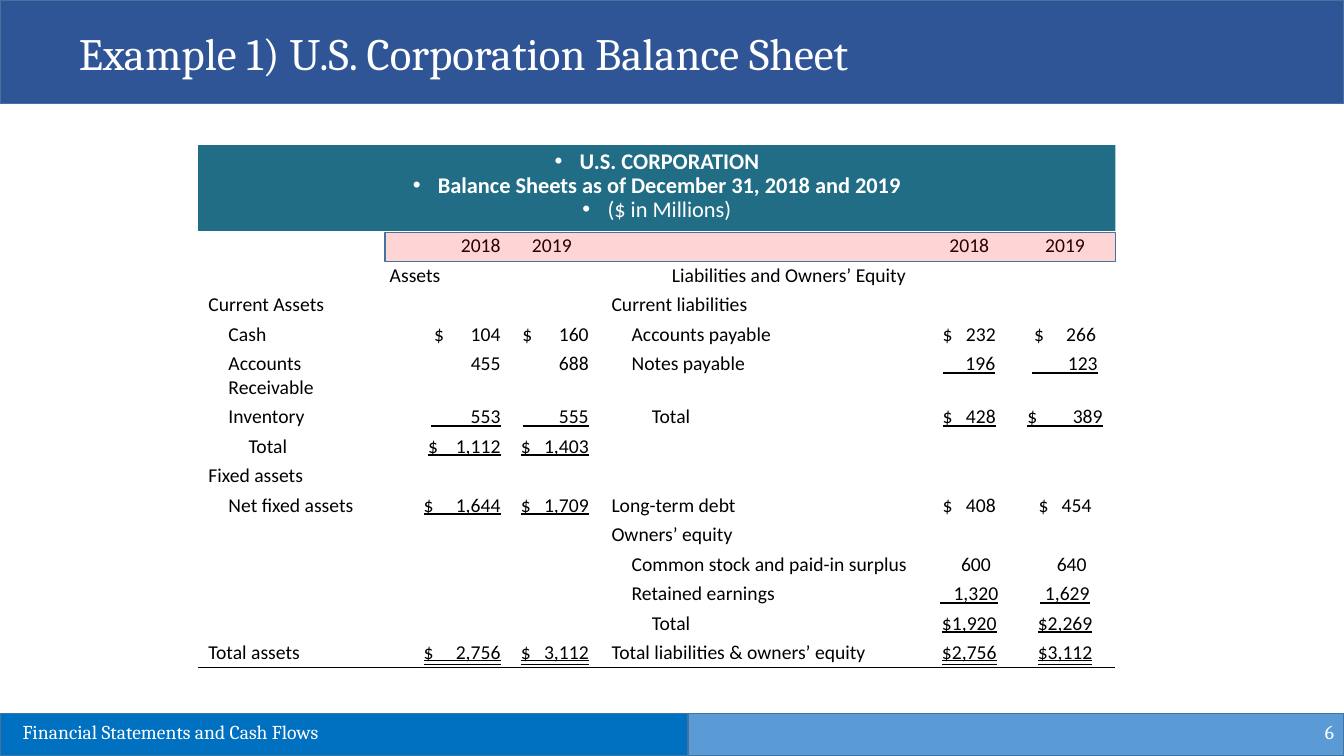
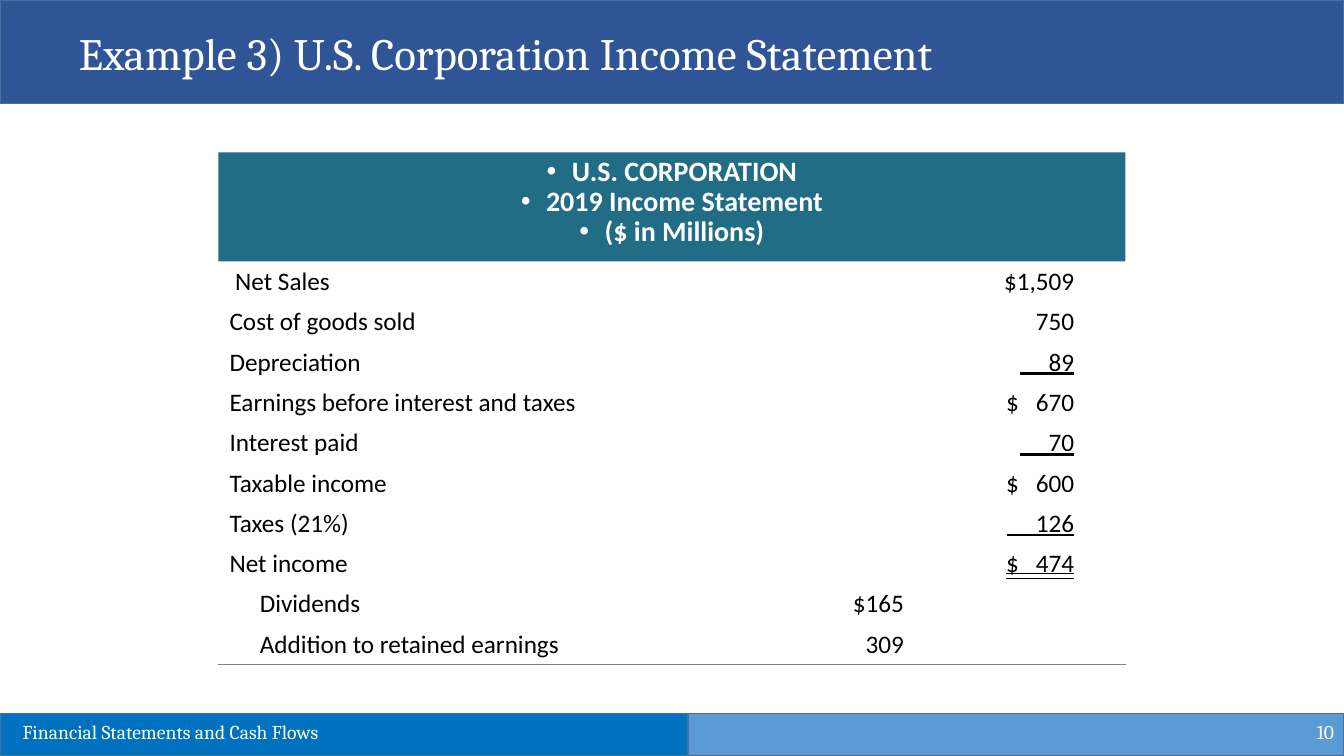
from lxml.etree import SubElement
from pptx import Presentation
from pptx.dml.color import RGBColor
from pptx.enum.shapes import MSO_SHAPE
from pptx.enum.text import MSO_ANCHOR, MSO_UNDERLINE, PP_ALIGN
from pptx.oxml import parse_xml
from pptx.oxml.ns import nsdecls, qn
from pptx.util import Pt

# Shared look
WIDTH, HEIGHT = 960, 540
WHITE, BLACK, GREY = "FFFFFF", "000000", "808080"
TITLE_BAND, BANNER, EDGE = "2F5597", "216D85", "43739E"
FOOTER_LEFT, FOOTER_RIGHT = "0070C0", "5B9BD5"
HIGHLIGHT = "FF0000"
HEAD_FONT, BODY_FONT, BULLET_FONT = "Cambria", "Calibri", "Arial"
FOOTER_TEXT = "Financial Statements and Cash Flows"
PLAIN_TABLE_STYLE = "{2D5ABB26-0587-4C30-8999-92F81FD0307C}"
LEFT, CENTER, RIGHT = PP_ALIGN.LEFT, PP_ALIGN.CENTER, PP_ALIGN.RIGHT


def rgb(color):
    return RGBColor.from_string(color)


def write(p, text, size=14, font=BODY_FONT, color=BLACK, bold=False,
          underline=None, align=LEFT, indent=0, hanging=0):
    """Fill one paragraph; an empty one only keeps its text size."""
    p.alignment = align
    if indent:
        pPr = p._p.get_or_add_pPr()
        pPr.set("marL", str(Pt(indent)))
        pPr.set("indent", str(-Pt(hanging)))
    if not text:
        p._p.get_or_add_endParaRPr().set("sz", str(size * 100))
        return
    r = p.add_run()
    r.text = text
    r.font.size, r.font.name, r.font.bold = Pt(size), font, bold
    r.font.color.rgb = rgb(color)
    r.font.underline = underline


def add_rect(s, x, y, w, h, fill, line=None, alpha=None):
    sp = s.shapes.add_shape(MSO_SHAPE.RECTANGLE, Pt(x), Pt(y), Pt(w), Pt(h))
    sp.shadow.inherit = False
    sp.fill.solid()
    sp.fill.fore_color.rgb = rgb(fill)
    if alpha is not None:
        clr = sp._element.spPr.find(qn("a:solidFill"))[0]
        SubElement(clr, qn("a:alpha")).set("val", str(alpha * 1000))
    if line:
        sp.line.color.rgb = rgb(line)
        sp.line.width = Pt(1)
    else:
        sp.line.fill.background()
    return sp


def add_label(s, text, x, y, w, h, anchor=MSO_ANCHOR.TOP, **fmt):
    tf = s.shapes.add_textbox(Pt(x), Pt(y), Pt(w), Pt(h)).text_frame
    tf.word_wrap = True
    tf.vertical_anchor = anchor
    write(tf.paragraphs[0], text, font=HEAD_FONT, color=WHITE, **fmt)


def add_page(prs, title, number):
    """Blank slide with title band, footer bands and page number."""
    s = prs.slides.add_slide(prs.slide_layouts[6])
    split, top = 491.3, 509.6
    add_rect(s, 0, 0, WIDTH, 74, TITLE_BAND, EDGE)
    add_rect(s, 0, top, split, HEIGHT - top, FOOTER_LEFT, EDGE)
    add_rect(s, split, top, WIDTH - split, HEIGHT - top, FOOTER_RIGHT, EDGE)
    add_label(s, str(number), 744, 508.3, 216, 29, MSO_ANCHOR.MIDDLE, align=RIGHT)
    add_label(s, FOOTER_TEXT, 9, 510.5, 399, 24)
    add_label(s, title, 49.2, 15, 870, 46, size=32)
    return s


def add_banner(s, x, y, w, h, lines, size):
    """Centred bulleted heading; lines are (text, bold) pairs."""
    tf = add_rect(s, x, y, w, h, BANNER).text_frame
    tf.word_wrap = True
    tf.vertical_anchor = MSO_ANCHOR.TOP
    for i, (text, bold) in enumerate(lines):
        p = tf.add_paragraph() if i else tf.paragraphs[0]
        write(p, text, size=size, color=WHITE, bold=bold, align=CENTER,
              indent=18, hanging=18)
        p.line_spacing = 0.9
        pPr = p._p.get_or_add_pPr()
        SubElement(pPr, qn("a:buFont")).set("typeface", BULLET_FONT)
        SubElement(pPr, qn("a:buChar")).set("char", "•")


def item(text, indent=0, **fmt):
    return dict(text=text, indent=indent, **fmt)


def under(text):
    return item(text, underline=MSO_UNDERLINE.SINGLE_LINE)


def double(text):
    return item(text, underline=MSO_UNDERLINE.DOUBLE_LINE)


def rule_below(cell, color):
    cell._tc.get_or_add_tcPr().insert(0, parse_xml(
        f'<a:lnB {nsdecls("a")} w="{Pt(1)}"><a:solidFill>'
        f'<a:srgbClr val="{color}"/></a:solidFill></a:lnB>'))


def add_statement(s, x, y, columns, rows, row_height, size, pads, rule):
    """Unfilled table; columns are (width, alignment, left inset, right inset)."""
    top, bottom = pads
    total = sum(column[0] for column in columns)
    table = s.shapes.add_table(len(rows), len(columns), Pt(x), Pt(y), Pt(total),
                               Pt(row_height * len(rows))).table
    table.first_row = table.horz_banding = False
    table._tbl.tblPr.find(qn("a:tableStyleId")).text = PLAIN_TABLE_STYLE
    for j, column in enumerate(columns):
        table.columns[j].width = Pt(column[0])
    for i, row in enumerate(rows):
        table.rows[i].height = Pt(row_height)
        for j, (_, align, left, right) in enumerate(columns):
            cell = table.cell(i, j)
            cell.fill.background()
            cell.margin_left, cell.margin_right = Pt(left), Pt(right)
            cell.margin_top, cell.margin_bottom = Pt(top), Pt(bottom)
            entry = row[j] if isinstance(row[j], dict) else item(row[j])
            write(cell.text_frame.paragraphs[0],
                  **{"size": size, "align": align, **entry})
            if i == len(rows) - 1:
                rule_below(cell, rule)


def balance_sheet(prs):
    s = add_page(prs, "Example 1) U.S. Corporation Balance Sheet", 6)
    x, y, step = 141.6, 165, 14.4
    # The narrow 2019 column needs a small left inset to keep amounts on one line
    columns = [(129.6, LEFT, 7.2, 7.2), (93.6, RIGHT, 7.2, 7.2),
               (64.8, RIGHT, 3, 9), (230.4, LEFT, 7.2, 7.2),
               (64.8, CENTER, 7.2, 7.2), (72, CENTER, 7.2, 7.2)]
    width = sum(column[0] for column in columns)
    add_banner(s, x, 103.6, width, y - 103.6, [
        ("U.S. CORPORATION", True),
        ("Balance Sheets as of December 31, 2018 and 2019", True),
        ("($ in Millions)", False)], 16)
    rows = [
        ["", "2018", item("2019", align=CENTER), "", "2018", "2019"],
        ["", item("Assets", align=LEFT), "",
         item("Liabilities and Owners’ Equity", 3 * step), "", ""],
        ["Current Assets", "", "", "Current liabilities", "", ""],
        [item("Cash", step), "$      104", "$      160",
         item("Accounts payable", step), "$   232", "$     266"],
        [item("Accounts Receivable", step), "455", "688",
         item("Notes payable", step), under("     196"), under("        123")],
        [item("Inventory", step), under("         553"), under("        555"),
         item("Total", 2 * step), under("$   428"), under("$        389")],
        [item("Total", 2 * step), under("$    1,112"), under("$   1,403"), "", "", ""],
        ["Fixed assets", "", "", "", "", ""],
        [item("Net fixed assets", step), under("$     1,644"), under("$   1,709"),
         "Long-term debt", "$   408", "$   454"],
        ["", "", "", "Owners’ equity", "", ""],
        ["", "", "", item("Common stock and paid-in surplus", step),
         "   600", "   640"],
        ["", "", "", item("Retained earnings", step),
         under("   1,320"), under(" 1,629")],
        ["", "", "", item("Total", 2 * step), under("$1,920"), under("$2,269")],
        ["Total assets", double("$     2,756"), double("$   3,112"),
         "Total liabilities & owners’ equity", double("$2,756"), double("$3,112")],
    ]
    add_statement(s, x, y, columns, rows, 21.1, 14, (2.1, 2.1), BLACK)
    # Tint over the year headings
    add_rect(s, 275, 166, x + width - 275, 21, HIGHLIGHT, EDGE, alpha=17)


def income_statement(prs):
    s = add_page(prs, "Example 3) U.S. Corporation Income Statement", 10)
    x, y, step = 156, 186.7, 21.6
    columns = [(404.6, LEFT, 8, 8), (121.7, RIGHT, 8, 36.7),
               (121.7, RIGHT, 8, 36.7)]
    add_banner(s, x, 108.8, sum(column[0] for column in columns), y - 108.8, [
        ("U.S. CORPORATION", True),
        ("2019 Income Statement", True),
        ("($ in Millions)", True)], 20)
    rows = [
        [" Net Sales", "", "$1,509"],
        ["Cost of goods sold", "", "750"],
        ["Depreciation", "", under("     89")],
        ["Earnings before interest and taxes", "", "$   670"],
        ["Interest paid", "", under("     70")],
        ["Taxable income", "", "$   600"],
        ["Taxes (21%)", "", under("     126")],
        ["Net income", "", double("$   474")],
        [item("Dividends", step), "$165", ""],
        [item("Addition to retained earnings", step), "309", ""],
    ]
    add_statement(s, x, y, columns, rows, 28.8, 18, (3.6, 3.2), GREY)


def main():
    prs = Presentation()
    prs.slide_width, prs.slide_height = Pt(WIDTH), Pt(HEIGHT)
    balance_sheet(prs)
    income_statement(prs)
    prs.save("out.pptx")


if __name__ == "__main__":
    main()
